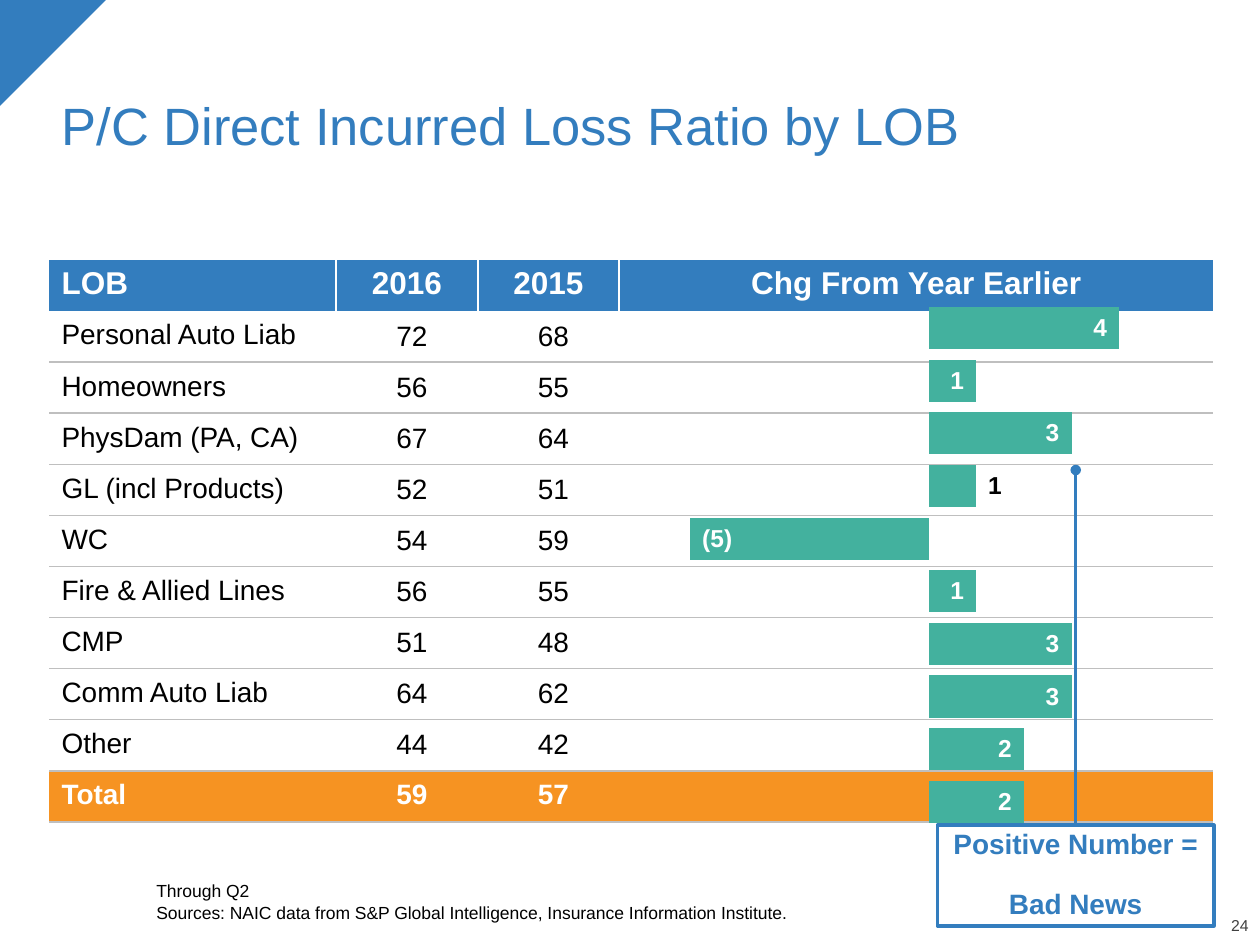
from lxml import etree
from pptx import Presentation
from pptx import util as u
from pptx.chart import data as chart_data
from pptx.dml.color import RGBColor
from pptx.enum import chart as chart_enum, shapes, text
from pptx.oxml import parse_xml
from pptx.oxml.ns import nsdecls, qn

Pt = u.Pt
BLUE = RGBColor(0x33, 0x7D, 0xBE)
TEAL = RGBColor(0x43, 0xB1, 0x9E)
ORANGE = RGBColor(0xF6, 0x93, 0x22)
GRAY = RGBColor(0xBF, 0xBF, 0xBF)
DARK = RGBColor(0x40, 0x40, 0x40)
WHITE = RGBColor(0xFF, 0xFF, 0xFF)
BLACK = RGBColor(0, 0, 0)
LEFT, CENTER, RIGHT = text.PP_ALIGN.LEFT, text.PP_ALIGN.CENTER, text.PP_ALIGN.RIGHT
NUMBER_FORMAT = r'_(* #,##0_);_(* \(#,##0\);_(* "-"??_);_('


def style(paragraph, size, color, bold=False, alignment=LEFT, spacing=0.9, before=0):
    paragraph.alignment = alignment
    paragraph.line_spacing = spacing
    paragraph.space_before = Pt(before)
    paragraph.font.name = "Arial"
    paragraph.font.size = Pt(size)
    paragraph.font.bold = bold
    paragraph.font.color.rgb = color


def add_border(cell, side, color, width):
    properties = cell._tc.get_or_add_tcPr()
    properties.append(parse_xml(
        f'<a:{side} {nsdecls("a")} w="{Pt(width)}"><a:solidFill>'
        f'<a:srgbClr val="{color}"/></a:solidFill></a:{side}>'))


presentation = Presentation()
presentation.slide_width, presentation.slide_height = Pt(720), Pt(540)
slide = presentation.slides.add_slide(presentation.slide_layouts[1])

corner = slide.shapes.add_shape(shapes.MSO_SHAPE.RIGHT_TRIANGLE, 0, 0, Pt(60.5), Pt(60.5))
corner.rotation = 90
corner.shadow.inherit = False
corner.fill.solid()
corner.fill.fore_color.rgb = BLUE
corner.line.fill.background()

title = slide.shapes.title
title.left, title.top, title.width, title.height = Pt(28), Pt(18), Pt(666), Pt(75)
title.text_frame.text = "P/C Direct Incurred Loss Ratio by LOB"
title.text_frame.auto_size = text.MSO_AUTO_SIZE.NONE
title.text_frame.vertical_anchor = text.MSO_ANCHOR.BOTTOM
style(title.text_frame.paragraphs[0], 30, BLUE)

notes = slide.placeholders[1]
notes.left, notes.top, notes.width, notes.height = Pt(89.3), Pt(495.4), Pt(605), Pt(32.4)
frame = notes.text_frame
frame.text = ("Through Q2\nSources: NAIC data from S&P Global Intelligence, "
              "Insurance Information Institute.")
frame.auto_size = text.MSO_AUTO_SIZE.NONE
frame.vertical_anchor = text.MSO_ANCHOR.BOTTOM
frame.margin_left = frame.margin_top = frame.margin_right = frame.margin_bottom = 0
for index, paragraph in enumerate(frame.paragraphs):
    properties = paragraph._p.get_or_add_pPr()
    properties.set("marL", "0")
    properties.set("indent", "0")
    etree.SubElement(properties, qn("a:buNone"))
    style(paragraph, 10, BLACK, before=2 * index)

page = slide.shapes.add_textbox(Pt(679), Pt(524.9), Pt(34.5), Pt(9.4))
frame = page.text_frame
frame.word_wrap = True
frame.margin_left = frame.margin_top = frame.margin_right = frame.margin_bottom = 0
frame.vertical_anchor = text.MSO_ANCHOR.BOTTOM
frame.text = "24"
style(frame.paragraphs[0], 9, DARK, alignment=RIGHT)

rows = [
    ("LOB", "2016", "2015", "Chg From Year Earlier"),
    ("Personal Auto Liab", "72", "68", ""),
    ("Homeowners", "56", "55", ""),
    ("PhysDam (PA, CA)", "67", "64", ""),
    ("GL (incl Products)", "52", "51", ""),
    ("WC", "54", "59", ""),
    ("Fire & Allied Lines", "56", "55", ""),
    ("CMP", "51", "48", ""),
    ("Comm Auto Liab", "64", "62", ""),
    ("Other", "44", "42", ""),
    ("Total", "59", "57", ""),
]
last = len(rows) - 1
table_shape = slide.shapes.add_table(len(rows), 4, Pt(28), Pt(148.5), Pt(665.4), Pt(321.2))
table = table_shape.table
table.horz_banding = False
style_id = next(table_shape.element.iter(qn("a:tableStyleId")))
style_id.text = "{2D5ABB26-0587-4C30-8999-92F81FD0307C}"
for column, width in zip(table.columns, (164.1, 80.9, 80.9, 339.5)):
    column.width = Pt(width)
for row_index, row in enumerate(rows):
    table.rows[row_index].height = Pt(29.2)
    header, total = row_index == 0, row_index == last
    for column_index, value in enumerate(row):
        cell = table.cell(row_index, column_index)
        cell.vertical_anchor = text.MSO_ANCHOR.MIDDLE
        cell.text = value
        numeric = column_index in (1, 2) and not header
        if numeric:
            cell.margin_right = Pt(28.8)
        alignment = RIGHT if numeric else CENTER if column_index else LEFT
        style(cell.text_frame.paragraphs[0], 18 if header else 16,
              WHITE if header or total else BLACK, header or total, alignment,
              1 if numeric and not total else 0.9)
        if header:
            if column_index > 0:
                add_border(cell, "lnL", WHITE, 1.5)
            if column_index < 3:
                add_border(cell, "lnR", WHITE, 1.5)
        else:
            if row_index > 1:
                add_border(cell, "lnT", GRAY, 1)
            add_border(cell, "lnB", GRAY, 1.5 if total else 1)
        if header or total:
            cell.fill.solid()
            cell.fill.fore_color.rgb = BLUE if header else ORANGE
        else:
            cell.fill.background()

changes = chart_data.CategoryChartData(number_format=NUMBER_FORMAT)
changes.categories = [str(number) for number in range(1, 11)]
changes.add_series("Series 1", (4, 1, 3, 1, -5, 1, 3, 3, 2, 2))
chart = slide.shapes.add_chart(chart_enum.XL_CHART_TYPE.BAR_CLUSTERED, Pt(367.2), Pt(166.3),
                               Pt(326.9), Pt(313.2), changes).chart
chart.has_legend = False
chart.has_title = False
chart.font.name, chart.font.size = "Arial", Pt(10)
chart.font.color.rgb = BLACK
chart.category_axis.reverse_order = True
chart.value_axis.has_major_gridlines = False
chart.value_axis.minimum_scale, chart.value_axis.maximum_scale = -6, 6
chart.category_axis.visible = chart.value_axis.visible = False
plot = chart.plots[0]
plot.gap_width = 25
plot.vary_by_categories = False
series = plot.series[0]
series.invert_if_negative = False
series.format.fill.solid()
series.format.fill.fore_color.rgb = TEAL
labels = series.data_labels
labels.show_value = True
labels.number_format, labels.number_format_is_linked = NUMBER_FORMAT, False
labels.position = chart_enum.XL_LABEL_POSITION.INSIDE_END
outside_label = series.points[3].data_label
outside_label.position = chart_enum.XL_LABEL_POSITION.OUTSIDE_END
for font, color in ((labels.font, WHITE), (outside_label.font, BLACK)):
    font.name, font.size, font.bold = "Arial", Pt(14), True
    font.color.rgb = color

plot_area = next(chart.element.iter(qn("c:plotArea")))
for old_layout in plot_area.findall(qn("c:layout")):
    plot_area.remove(old_layout)
plot_area.insert(0, parse_xml(
    f'<c:layout {nsdecls("c")}><c:manualLayout><c:layoutTarget val="inner"/>'
    '<c:xMode val="edge"/><c:yMode val="edge"/><c:x val="0"/><c:y val="0.02"/>'
    '<c:w val="1"/><c:h val="0.96"/></c:manualLayout></c:layout>'))

callout = slide.shapes.add_group_shape()
box = callout.shapes.add_shape(shapes.MSO_SHAPE.RECTANGLE, Pt(535.7), Pt(471.6), Pt(158), Pt(57.6))
box.shadow.inherit = False
box.fill.solid()
box.fill.fore_color.rgb = WHITE
box.line.color.rgb = BLUE
box.line.width = Pt(2)
box.text_frame.word_wrap = True
box.text_frame.vertical_anchor = text.MSO_ANCHOR.MIDDLE
box.text_frame.text = "Positive Number =\nBad News"
for index, paragraph in enumerate(box.text_frame.paragraphs):
    style(paragraph, 16, BLUE, True, CENTER, before=17 * index)

pointer = callout.shapes.add_connector(shapes.MSO_CONNECTOR.STRAIGHT, Pt(614.7), Pt(471.6),
                                       Pt(614.7), Pt(268.6))
pointer.begin_connect(box, 0)
pointer.line.color.rgb = BLUE
pointer.line.width = Pt(2)
etree.SubElement(next(pointer.element.iter(qn("a:ln"))), qn("a:tailEnd"), type="oval")
etree.SubElement(pointer.element.spPr, qn("a:effectLst"))

presentation.save("out.pptx")
